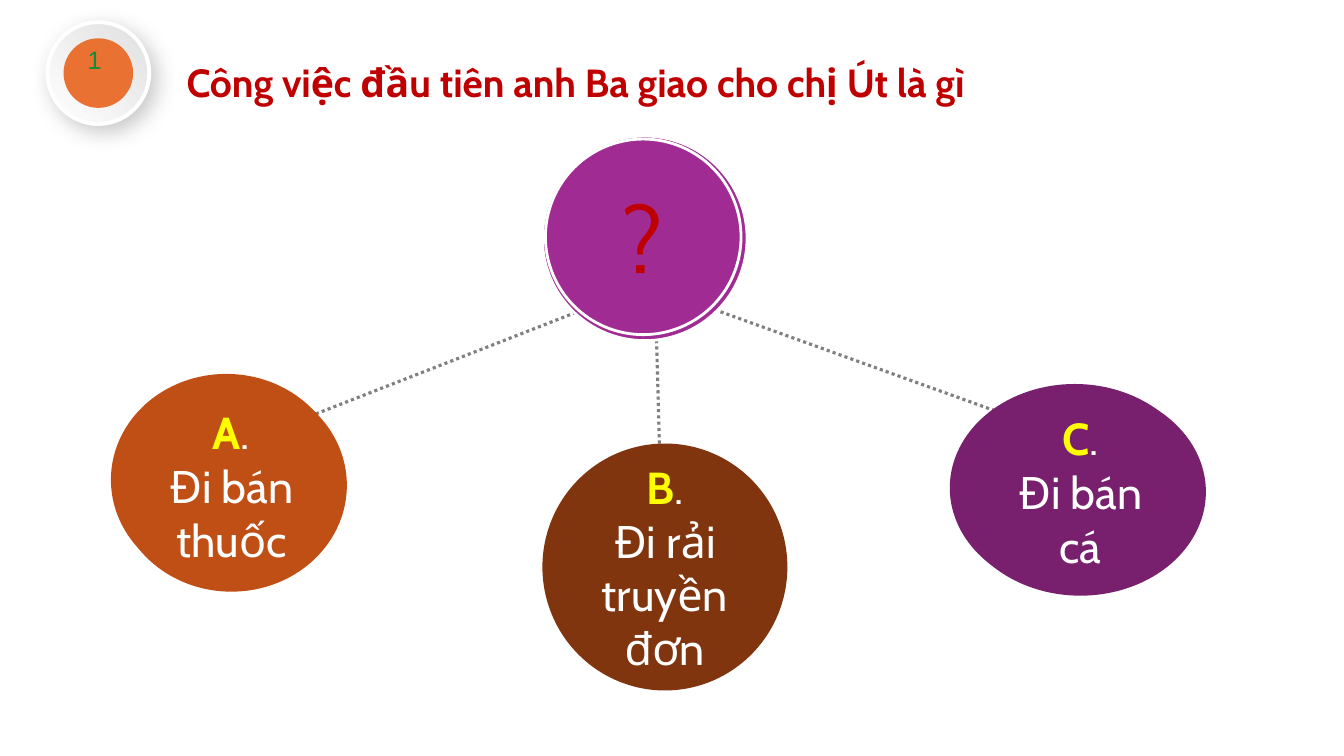
import pptx
import pptx.util
import pptx.dml.color
import pptx.enum.dml
import pptx.enum.shapes
import pptx.enum.text
import pptx.oxml
import pptx.oxml.ns
from lxml import etree

Inches = pptx.util.Inches
Pt = pptx.util.Pt
KIND = pptx.enum.shapes.MSO_SHAPE
ALIGN = pptx.enum.text.PP_ALIGN
ANCHOR = pptx.enum.text.MSO_ANCHOR
HUES = {"red": "C00000", "green": "118C3B", "yellow": "FFFF00", "white": "FFFFFF",
        "gray": "808080", "pale": "E0E0E0", "orange": "E97132", "rust": "C04F15",
        "brown": "80350E", "plum": "78206E", "purple": "A02B93"}


def tint(name):
    return pptx.dml.color.RGBColor.from_string(HUES[name])


def write(para, text, size, hue, bold=False, face="Cabin"):
    """Add a run with its font to a paragraph."""
    run = para.add_run()
    run.text = text
    style = {"size": Pt(size), "bold": bold, "name": face}
    for key, value in style.items():
        setattr(run.font, key, value)
    run.font.color.rgb = tint(hue)


deck = pptx.Presentation()
deck.slide_width, deck.slide_height = Inches(13.33), Inches(7.5)
slide = deck.slides.add_slide(deck.slide_layouts[5])
shapes = slide.shapes

# Number badge
ring = shapes.add_shape(KIND.OVAL, Inches(0.47), Inches(0.22), Inches(1.01), Inches(1.01))
ring.fill.gradient()
ring.fill.gradient_angle = 225
for stop, hue in zip(ring.fill.gradient_stops, ("pale", "white")):
    stop.color.rgb = tint(hue)
ring.line.color.rgb = tint("white")
ring.line.width = Pt(2.75)
ring.shadow.inherit = False
glow = ring._element.spPr.find(pptx.oxml.ns.qn("a:effectLst"))
glow.append(pptx.oxml.parse_xml(
    '<a:outerShdw xmlns:a="http://schemas.openxmlformats.org/drawingml/2006/main" '
    'blurRad="203200" dist="76200" dir="2940000" algn="tl" rotWithShape="0">'
    '<a:srgbClr val="000000"><a:alpha val="22000"/></a:srgbClr></a:outerShdw>'))

dot = shapes.add_shape(KIND.OVAL, Inches(0.63), Inches(0.38), Inches(0.69), Inches(0.69))
dot.fill.solid()
dot.fill.fore_color.rgb = tint("orange")
dot.line.fill.background()
dot.shadow.inherit = False

# Dotted lines from the question to the answers
for ends in ((2.38, 4.4, 5.89, 3.03), (6.54, 4.4, 6.51, 3.29), (10.16, 4.18, 7.11, 3.08)):
    link = shapes.add_connector(pptx.enum.shapes.MSO_CONNECTOR.STRAIGHT,
                                *[Inches(end) for end in ends])
    link.line.color.rgb = tint("gray")
    link.line.width = Pt(2.25)
    link.line.dash_style = pptx.enum.dml.MSO_LINE.ROUND_DOT
    etree.SubElement(link._element.spPr, pptx.oxml.ns.qn("a:effectLst"))

# Circles: colour, outer ring, disc, outline, paragraphs of (text, size, colour, bold)
discs = [
    ("rust", (1.1, 3.71, 2.29, 2.1), (1.15, 3.76, 2.29, 2.11), False, "A", "Đi bán thuốc"),
    ("brown", (5.61, 4.53, 2.16, 2.19), (5.38, 4.4, 2.43, 2.45), False, "B", "Đi rải truyền đơn"),
    ("plum", (9.42, 3.81, 2.48, 2.06), (9.47, 3.85, 2.49, 2.06), False, "C", "Đi bán cá"),
    ("purple", (5.38, 1.35, 2.03, 2.03), (5.41, 1.38, 1.94, 1.94), True, "?", ""),
]
for hue, rim, core, edged, mark, answer in discs:
    for kind, area in ((KIND.DONUT, rim), (KIND.OVAL, core)):
        disc = shapes.add_shape(kind, *[Inches(side) for side in area])
        if kind == KIND.DONUT:
            disc.adjustments[0] = 0.05
        disc.fill.solid()
        disc.fill.fore_color.rgb = tint(hue)
        disc.shadow.inherit = False
        if edged:
            disc.line.color.rgb = tint("white")
            disc.line.width = Pt(2)
        else:
            disc.line.fill.background()
    frame = disc.text_frame
    frame.word_wrap = True
    frame.vertical_anchor = ANCHOR.MIDDLE
    head = frame.paragraphs[0]
    head.alignment = ALIGN.CENTER
    if answer:
        write(head, mark, 32, "yellow", True)
        write(head, ".", 32, "white")
        body = frame.add_paragraph()
        body.alignment = ALIGN.CENTER
        write(body, answer, 32, "white")
    else:
        write(head, mark, 66, "red")

# Question and its number
title = shapes.title
title.left, title.top, title.width, title.height = [
    Inches(side) for side in (1.75, 0.53, 8.94, 0.88)]
label = shapes.add_textbox(Inches(0.77), Inches(0.39), Inches(0.33), Inches(0.4))
for box, text, size, hue, bold, face in (
        (title, "Công việc đầu tiên anh Ba giao cho chị Út là gì", 28, "red", True, "Cabin"),
        (label, "1", 18, "green", False, "Arial")):
    frame = box.text_frame
    frame.word_wrap = False
    frame.auto_size = pptx.enum.text.MSO_AUTO_SIZE.NONE
    frame.vertical_anchor = ANCHOR.TOP
    frame.paragraphs[0].alignment = ALIGN.LEFT
    write(frame.paragraphs[0], text, size, hue, bold, face)

deck.save("out.pptx")
